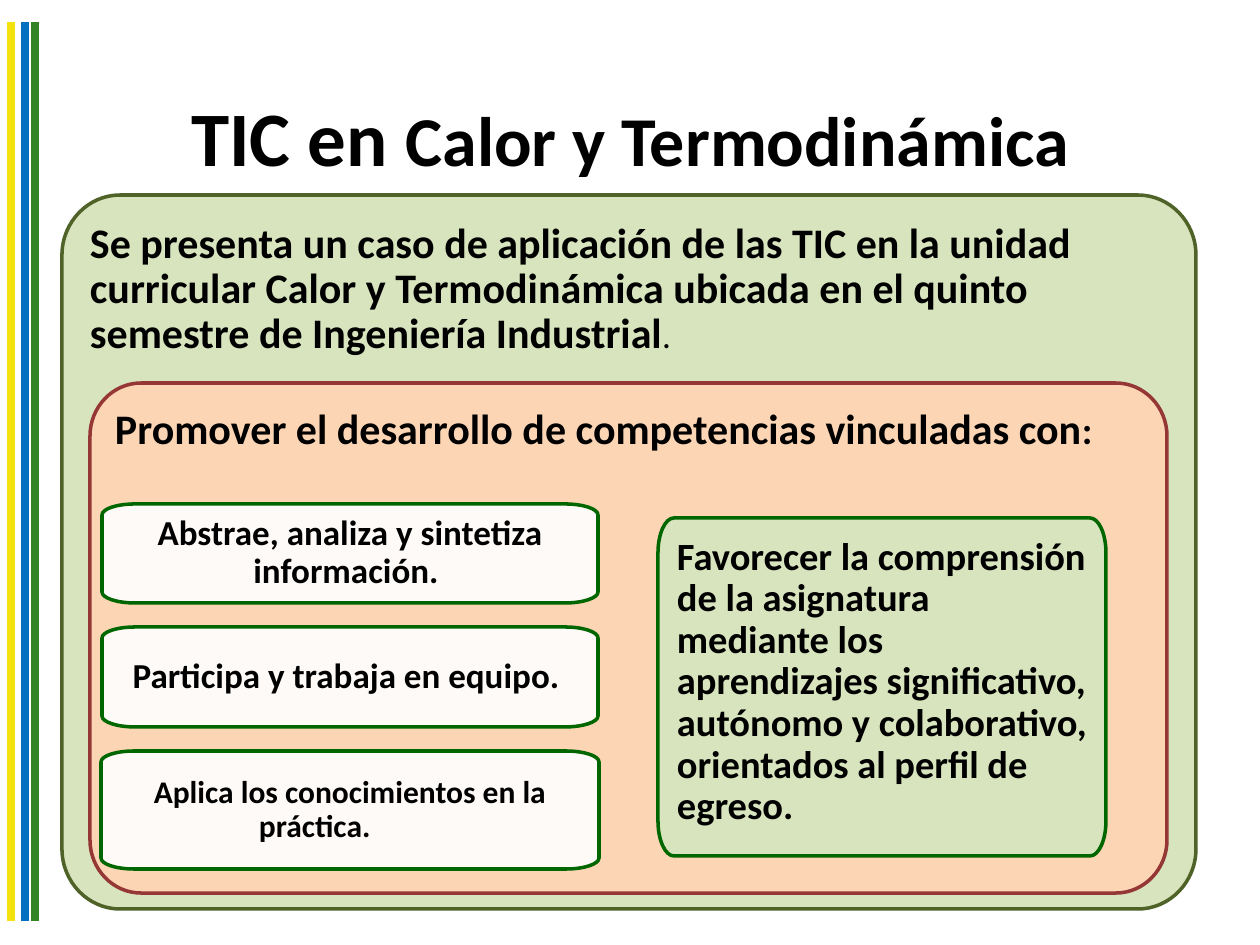
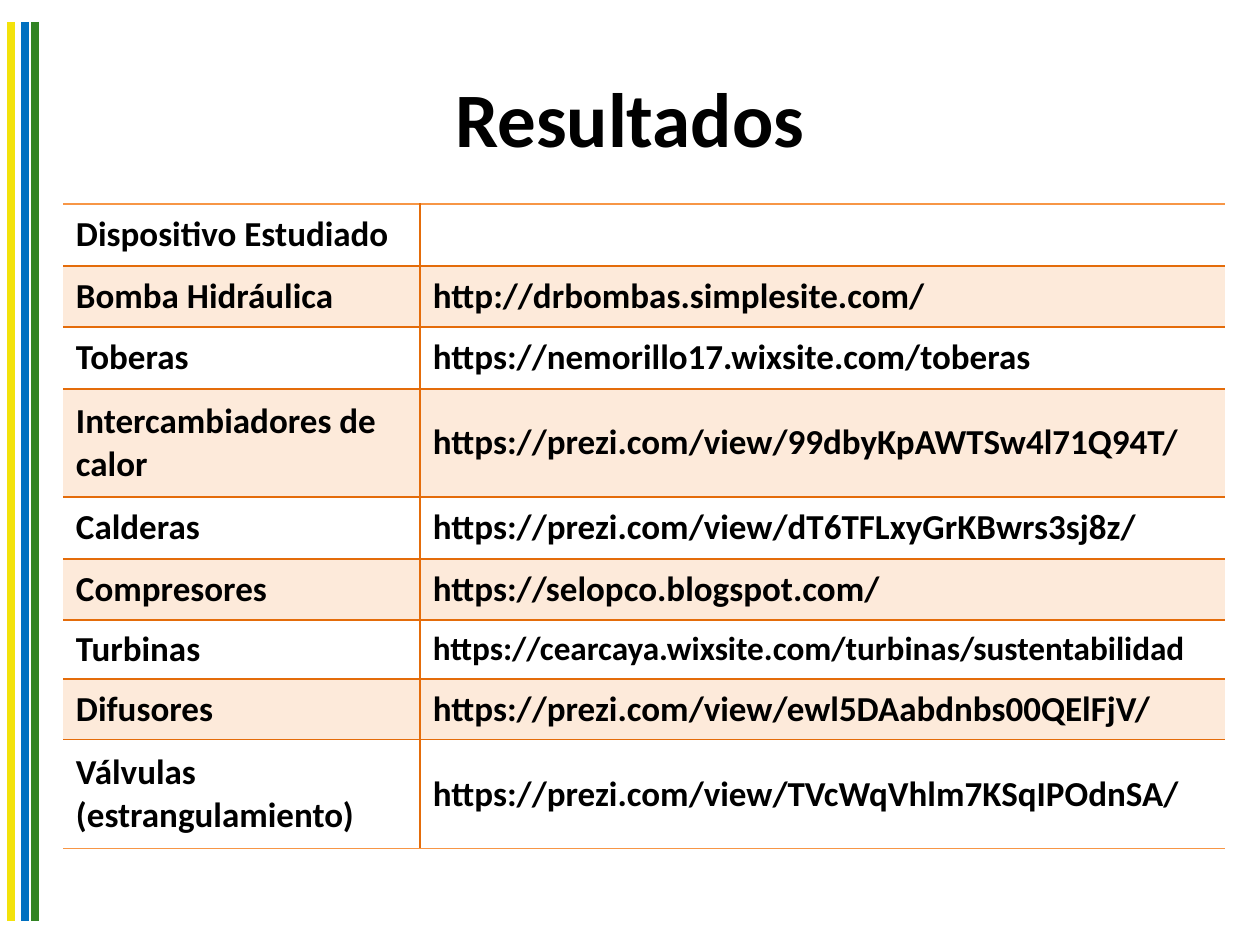
from lxml import etree
from pptx import Presentation, util as u
from pptx.dml.color import RGBColor
from pptx.enum import shapes, text
from pptx.oxml import ns

EMU_PER_PX = 914400 / 126
ARC = 0.55  # share of the way to the corner at which a curve's handles lie
FONT = "Calibri"
COLORS = {
    "text": "000000", "white": "FFFFFF", "yellow": "F3E20B", "blue": "0070C0",
    "green": "328424", "sage": "D7E4BD", "olive": "4F6228", "peach": "FCD5B5",
    "wine": "953735", "forest": "006600", "orange": "F79646", "rust": "E46C0A",
}
STRIPES = [("yellow", 11), ("blue", 25), ("green", 35)]
NO_STYLE = "{2D5ABB26-0587-4C30-8999-92F81FD0307C}"

SKILLS = [
    # text, size, width, height
    ("Abstrae, analiza y sintetiza información. ", 20, 496, 99),
    ("Participa y trabaja en equipo. ", 20, 496, 100),
    ("Aplica los conocimientos en la práctica. \t", 18, 498, 118),
]
DEVICES = [
    # device, address, row height, address size
    ("Dispositivo Estudiado", "", 62, 20),
    ("Bomba Hidráulica", "http://drbombas.simplesite.com/", 61, 20),
    ("Toberas", "https://nemorillo17.wixsite.com/toberas", 62, 20),
    ("Intercambiadores de calor", "https://prezi.com/view/99dbyKpAWTSw4l71Q94T/", 108, 20),
    ("Calderas", "https://prezi.com/view/dT6TFLxyGrKBwrs3sj8z/", 62, 20),
    ("Compresores", "https://selopco.blogspot.com/", 61, 20),
    ("Turbinas", "https://cearcaya.wixsite.com/turbinas/sustentabilidad", 59, 19),
    ("Difusores", "https://prezi.com/view/ewl5DAabdnbs00QElFjV/", 61, 20),
    ("Válvulas (estrangulamiento)", "https://prezi.com/view/TVcWqVhlm7KSqIPOdnSA/", 109, 20),
]


def px(n):
    return u.Emu(round(n * EMU_PER_PX))


def rgb(name):
    return RGBColor.from_string(COLORS[name])


def assign(obj, values):
    for name, value in values.items():
        setattr(obj, name, value)


def set_fill(fill, color, opacity=100):
    fill.solid()
    fill.fore_color.rgb = rgb(color)
    if opacity < 100:
        clr = fill._xPr.find(ns.qn("a:solidFill") + "/" + ns.qn("a:srgbClr"))
        etree.SubElement(clr, ns.qn("a:alpha"), val=str(opacity * 1000))


def write(tf, runs, align=text.PP_ALIGN.LEFT, spacing=1.0):
    """Fill the first paragraph with (text, size, bold) runs."""
    tf.word_wrap = True
    p = tf.paragraphs[0]
    assign(p, {"alignment": align, "line_spacing": spacing})
    for words, size, bold in runs:
        r = p.add_run()
        r.text = words
        assign(r.font, {"name": FONT, "size": u.Pt(size), "bold": bold})
        r.font.color.rgb = rgb("text")


def add_stripes(s):
    """Draw the stripes and hand them to the layout, which all slides share."""
    for i, (color, x) in enumerate(STRIPES):
        line = s.shapes.add_connector(
            shapes.MSO_CONNECTOR.STRAIGHT, px(x), px(22), px(x), px(921))
        line.line.color.rgb = rgb(color)
        line.line.width = u.Pt(4.5)
        etree.SubElement(line._element.spPr, ns.qn("a:effectLst"))
        line._element.nvCxnSpPr.cNvPr.id = 20 + i
        s.slide_layout.shapes.element.insert(2 + i, line._element)


def add_titled_slide(prs, top, runs):
    s = prs.slides.add_slide(prs.slide_layouts[5])
    title = s.shapes.title
    assign(title, {"left": px(63), "top": px(top), "width": px(1134), "height": px(158)})
    title.text_frame.vertical_anchor = text.MSO_ANCHOR.MIDDLE
    write(title.text_frame, runs, text.PP_ALIGN.CENTER)
    return s


def round_corners(sp, corners):
    """Turn every other segment of the outline into a curve around its corner."""
    start = sp._element.find(".//" + ns.qn("a:moveTo"))
    nodes = [start] + list(sp._element.iter(ns.qn("a:lnTo")))
    points = [(int(n[0].get("x")), int(n[0].get("y"))) for n in nodes]
    for i, corner in enumerate(corners):
        begin, end, node = points[2 * i], points[2 * i + 1], nodes[2 * i + 1]
        node.tag = ns.qn("a:cubicBezTo")
        curve = etree.Element(ns.qn("a:cubicBezTo"))
        handles = [[round(a + (c - a) * ARC) for a, c in zip(point, corner)]
                   for point in (begin, end)]
        for hx, hy in (*handles, end):
            etree.SubElement(curve, ns.qn("a:pt"), x=str(hx), y=str(hy))
        node.getparent().replace(node, curve)


def add_panel(s, box, radii, fill, line, insets, runs, opacity=100, centered=False):
    """Panel whose corners are quarter ellipses with the given (x, y) radii."""
    x, y, w, h = box
    rx, ry = radii
    points = [(0, ry), (rx, 0), (w - rx, 0), (w, ry),
              (w, h - ry), (w - rx, h), (rx, h), (0, h - ry)]
    points = [(px(x + dx), px(y + dy)) for dx, dy in points]
    outline = s.shapes.build_freeform(*points[0], scale=1.0)
    outline.add_line_segments(points[1:], close=True)
    sp = outline.convert_to_shape()
    right, bottom = sp.width, sp.height
    round_corners(sp, [(0, 0), (right, 0), (right, bottom), (0, bottom)])
    sp.shadow.inherit = False
    set_fill(sp.fill, fill, opacity)
    sp.line.color.rgb = rgb(line)
    sp.line.width = u.Pt(2)
    tf = sp.text_frame
    sides = ("margin_left", "margin_top", "margin_right", "margin_bottom")
    assign(tf, dict(zip(sides, map(px, insets))))
    tf.vertical_anchor = text.MSO_ANCHOR.MIDDLE if centered else text.MSO_ANCHOR.TOP
    align = text.PP_ALIGN.CENTER if centered else text.PP_ALIGN.LEFT
    write(tf, runs, align, 0.9)
    return sp


def add_skills(s, center, y, gap):
    for words, size, width, height in SKILLS:
        box = (center - width // 2, y, width, height)
        sp = add_panel(s, box, (33, 11), "white", "forest", [13] * 4,
                       [(words, size, True)], opacity=90, centered=True)
        if "\t" in words:
            pPr = sp.text_frame.paragraphs[0]._p.get_or_add_pPr()
            tabs = etree.SubElement(pPr, ns.qn("a:tabLst"))
            etree.SubElement(tabs, ns.qn("a:tab"), pos=str(px(182)), algn="l")
        y += height + gap


def add_case(s, box):
    """Nested panels: the case, its competences, the skills and the goal."""
    x, y, w, h = box
    add_panel(s, box, (58, 60), "sage", "olive", (28, 27, 28, 552), [
        ("Se presenta un caso de aplicación de las TIC en la unidad curricular Calor y "
         "Termodinámica ubicada en el quinto semestre de Ingeniería Industrial", 24, True),
        (".", 20, False)])
    add_panel(s, (x + 28, y + 188, w - 57, h - 204), (51, 53), "peach", "wine",
              (25, 25, 25, 321), [
        ("Promover el desarrollo de competencias vinculadas con", 24, True),
        (":", 22, True)])
    add_panel(s, (x + 596, y + 323, 448, 338), (16, 35), "sage", "forest",
              (19, 19, 19, 28), [
        ("Favorecer la comprensión de la asignatura mediante los aprendizajes "
         "significativo, autónomo y colaborativo, orientados al perfil de egreso.", 22, True)])
    add_skills(s, x + 288, y + 309, 24)


def set_borders(cell, borders):
    """Draw 1 pt borders; borders maps L, R, T, B (in that order) to colours."""
    tcPr = cell._tc.get_or_add_tcPr()
    for i, (side, color) in enumerate(borders.items()):
        ln = etree.Element(ns.qn("a:ln" + side), w=str(u.Pt(1)))
        fill = etree.SubElement(ln, ns.qn("a:solidFill"))
        etree.SubElement(fill, ns.qn("a:srgbClr"), val=COLORS[color])
        tcPr.insert(i, ln)


def add_devices(s, x, y, widths):
    heights = [device[2] for device in DEVICES]
    frame = s.shapes.add_table(len(DEVICES), len(widths), px(x), px(y),
                               px(sum(widths)), px(sum(heights)))
    table = frame.table
    assign(table, {"first_row": False, "horz_banding": False})
    table._tbl.tblPr.find(ns.qn("a:tableStyleId")).text = NO_STYLE
    for column, width in zip(table.columns, widths):
        column.width = px(width)
    last = len(DEVICES) - 1
    for i, (device, address, height, size) in enumerate(DEVICES):
        table.rows[i].height = px(height)
        edges = {"T": "orange" if i == 0 else "rust", "B": "orange" if i == last else "rust"}
        entries = [(device, 20, "R"), (address, size, "L")]
        for j, (words, points, inner_side) in enumerate(entries):
            cell = table.cell(i, j)
            assign(cell, {"margin_left": px(13), "margin_right": px(13),
                          "margin_top": px(8), "margin_bottom": px(8),
                          "vertical_anchor": text.MSO_ANCHOR.MIDDLE})
            if words:
                write(cell.text_frame, [(words, points, True)])
            if i % 2:
                set_fill(cell.fill, "orange", 20)
            else:
                cell.fill.background()
            set_borders(cell, {inner_side: "rust", **edges})


def main():
    prs = Presentation()
    assign(prs, {"slide_width": px(1260), "slide_height": px(945)})
    s = add_titled_slide(prs, 57, [("TIC en ", 44, True), ("Calor y Termodinámica", 40, True)])
    add_stripes(s)
    add_case(s, (62, 195, 1134, 714))
    s = add_titled_slide(prs, 38, [("Resultados", 44, True)])
    add_devices(s, 63, 204, (357, 805))
    prs.save("out.pptx")


if __name__ == "__main__":
    main()
